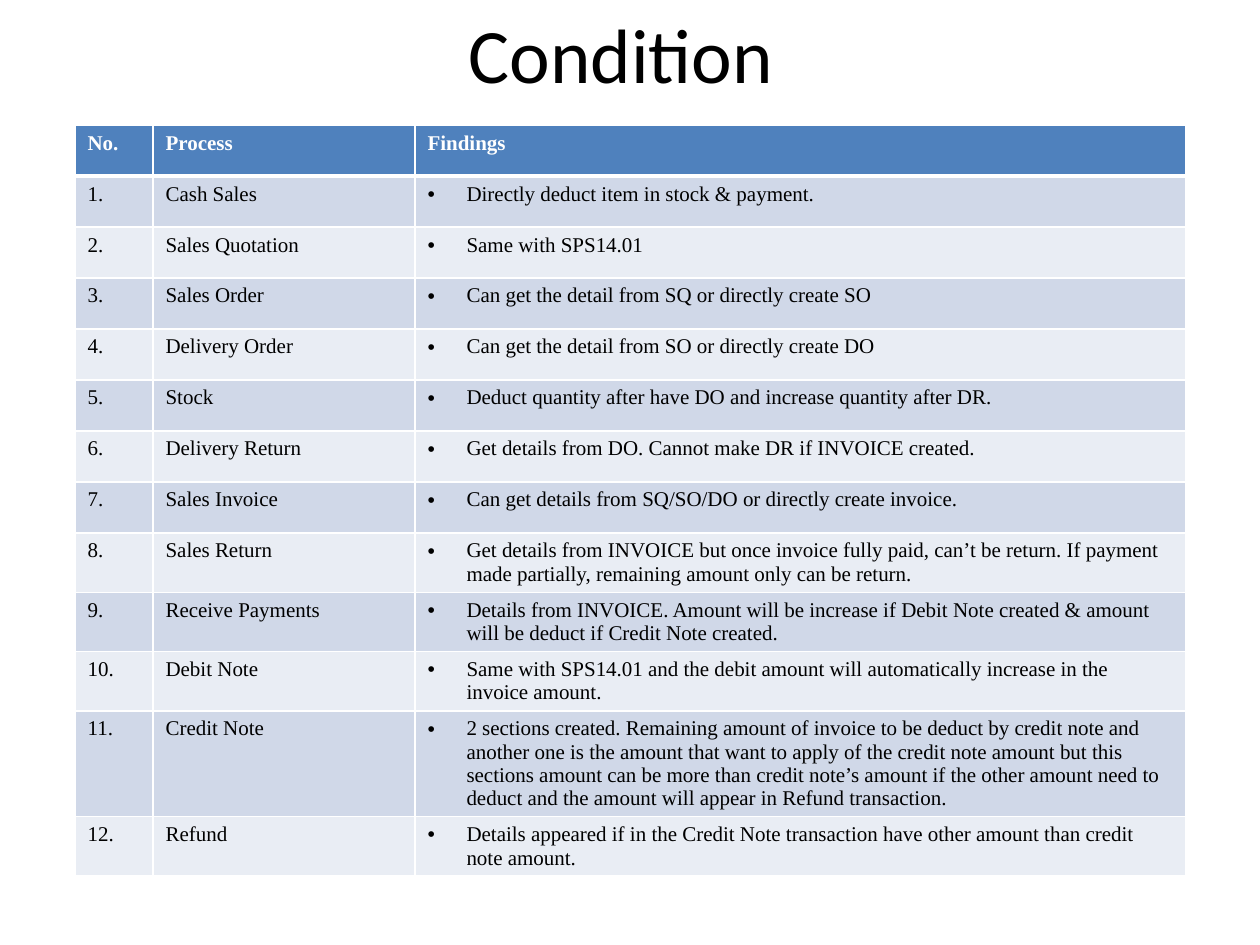
from lxml import etree
from pptx import Presentation, util as u
from pptx.dml.color import RGBColor
from pptx.enum import text
from pptx.oxml import ns

PX_PER_INCH = 126
BLACK = RGBColor(0x00, 0x00, 0x00)
WHITE = RGBColor(0xFF, 0xFF, 0xFF)
HEADER_BLUE = RGBColor(0x4F, 0x81, 0xBD)
BANDS = (RGBColor(0xD0, 0xD8, 0xE8), RGBColor(0xE9, 0xED, 0xF4))

HEADINGS = ("No.", "Process", "Findings")
FINDINGS = (
    ("Cash Sales", "Directly deduct item in stock & payment."),
    ("Sales Quotation", "Same with SPS14.01"),
    ("Sales Order", "Can get the detail from SQ or directly create SO"),
    ("Delivery Order", "Can get the detail from SO or directly create DO"),
    ("Stock", "Deduct quantity after have DO and increase quantity after DR."),
    ("Delivery Return", "Get details from DO. Cannot make DR if INVOICE created."),
    ("Sales Invoice", "Can get details from SQ/SO/DO or directly create invoice."),
    ("Sales Return", "Get details from INVOICE but once invoice fully paid, can’t be return. "
     "If payment made partially, remaining amount only can be return."),
    ("Receive Payments", "Details from INVOICE. Amount will be increase if Debit Note created "
     "& amount will be deduct if Credit Note created."),
    ("Debit Note", "Same with SPS14.01 and the debit amount will automatically increase "
     "in the invoice amount."),
    ("Credit Note", "2 sections created. Remaining amount of invoice to be deduct by credit "
     "note and another one is the amount that want to apply of the credit note amount but this "
     "sections amount can be more than credit note’s amount if the other amount need to deduct "
     "and the amount will appear in Refund transaction."),
    ("Refund", "Details appeared if in the Credit Note transaction have other amount than "
     "credit note amount."),
)


def px(length):
    return u.Emu(round(length * u.Inches(1) / PX_PER_INCH))


def add_xml(parent, tag, **attributes):
    return etree.SubElement(parent, ns.qn(tag), attributes)


class SlideBuilder:
    TITLE = {"name": "Calibri", "size": u.Pt(44)}
    BODY = {"name": "Times New Roman", "size": u.Pt(12)}

    def __init__(self, slide):
        self.slide = slide

    def add_span(self, para, wording, style, color, bold=False):
        span = para.add_run()
        span.text = wording
        for name, value in {**style, "bold": bold}.items():
            setattr(span.font, name, value)
        span.font.color.rgb = color

    def title(self, wording, left, top, width, height):
        box = self.slide.shapes.title
        place = {"left": left, "top": top, "width": width, "height": height}
        for name, value in place.items():
            setattr(box, name, px(value))
        box.text_frame.vertical_anchor = text.MSO_ANCHOR.MIDDLE
        para = box.text_frame.paragraphs[0]
        para.alignment = text.PP_ALIGN.CENTER
        self.add_span(para, wording, self.TITLE, BLACK)

    def borders(self, cell, top, bottom):
        properties = cell._tc.get_or_add_tcPr()
        for side, points in {"L": 1, "R": 1, "T": top, "B": bottom}.items():
            line = add_xml(properties, f"a:ln{side}", w=str(u.Pt(points)))
            add_xml(add_xml(line, "a:solidFill"), "a:srgbClr", val=str(WHITE))

    def bullet(self, para, indent):
        properties = para._p.get_or_add_pPr()
        properties.set("marL", str(px(indent)))
        properties.set("indent", str(-px(indent)))
        add_xml(properties, "a:buFont", typeface="Arial")
        add_xml(properties, "a:buChar", char="•")

    def table(self, rows, left, top, widths, row_height, height):
        frame = self.slide.shapes.add_table(
            len(rows), len(widths), px(left), px(top), px(sum(widths)), px(height))
        table = frame.table
        for column, width in zip(table.columns, widths):
            column.width = px(width)
        for r, values in enumerate(rows):
            table.rows[r].height = px(row_height)
            header = r == 0
            for c, wording in enumerate(values):
                cell = table.cell(r, c)
                # The rule under the header is thicker than the others
                self.borders(cell, top=3 if r == 1 else 1, bottom=3 if header else 1)
                cell.fill.solid()
                cell.fill.fore_color.rgb = HEADER_BLUE if header else BANDS[(r - 1) % 2]
                para = cell.text_frame.paragraphs[0]
                if c == len(widths) - 1 and not header:
                    self.bullet(para, 39)
                self.add_span(para, wording, self.BODY, WHITE if header else BLACK, header)
        frame.height = px(height)


def main():
    deck = Presentation()
    deck.slide_width, deck.slide_height = px(1260), px(945)
    title_only = deck.slide_layouts[5]
    builder = SlideBuilder(deck.slides.add_slide(title_only))

    # Heading
    builder.title("Condition", 54, 0, 1134, 106)

    # Findings for each numbered process
    rows = [HEADINGS]
    rows += [(f"{number}.", *finding) for number, finding in enumerate(FINDINGS, 1)]
    builder.table(rows, left=75, top=125, widths=(78, 262, 771), row_height=51, height=774)

    deck.save("out.pptx")


if __name__ == "__main__":
    main()
